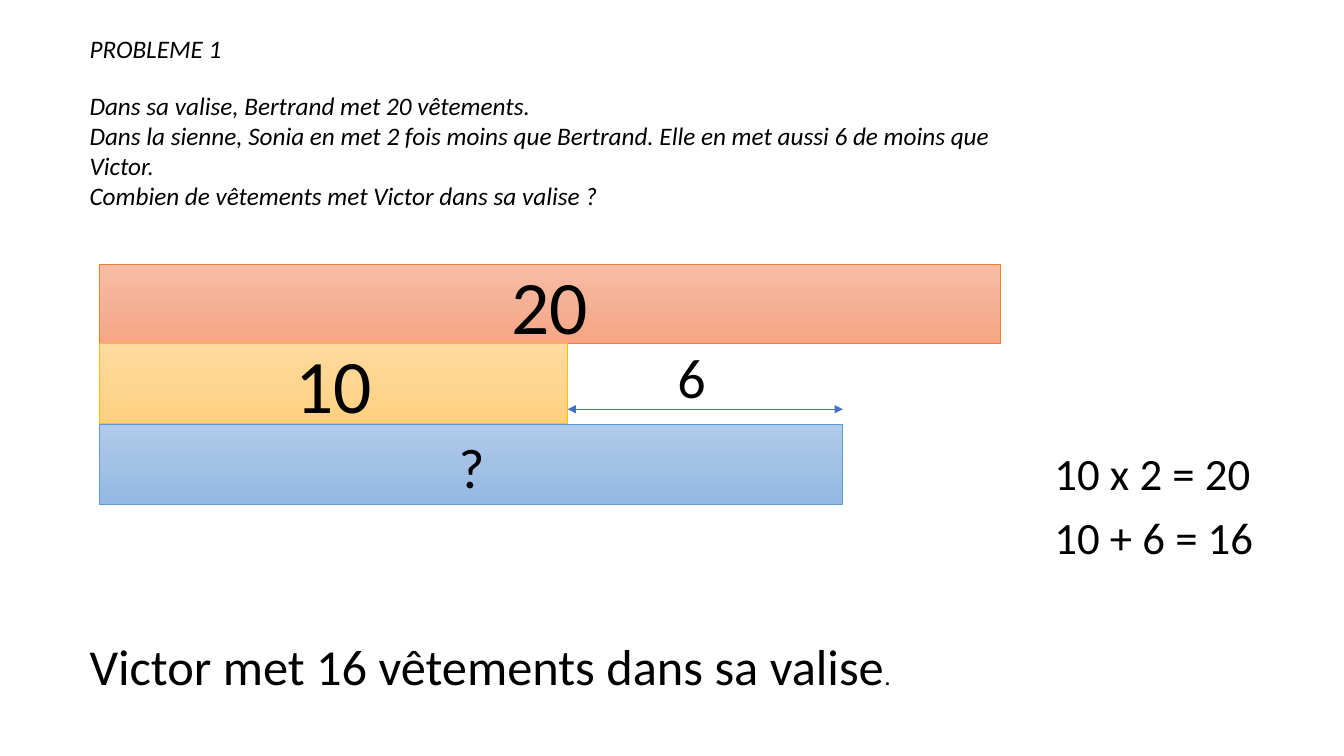
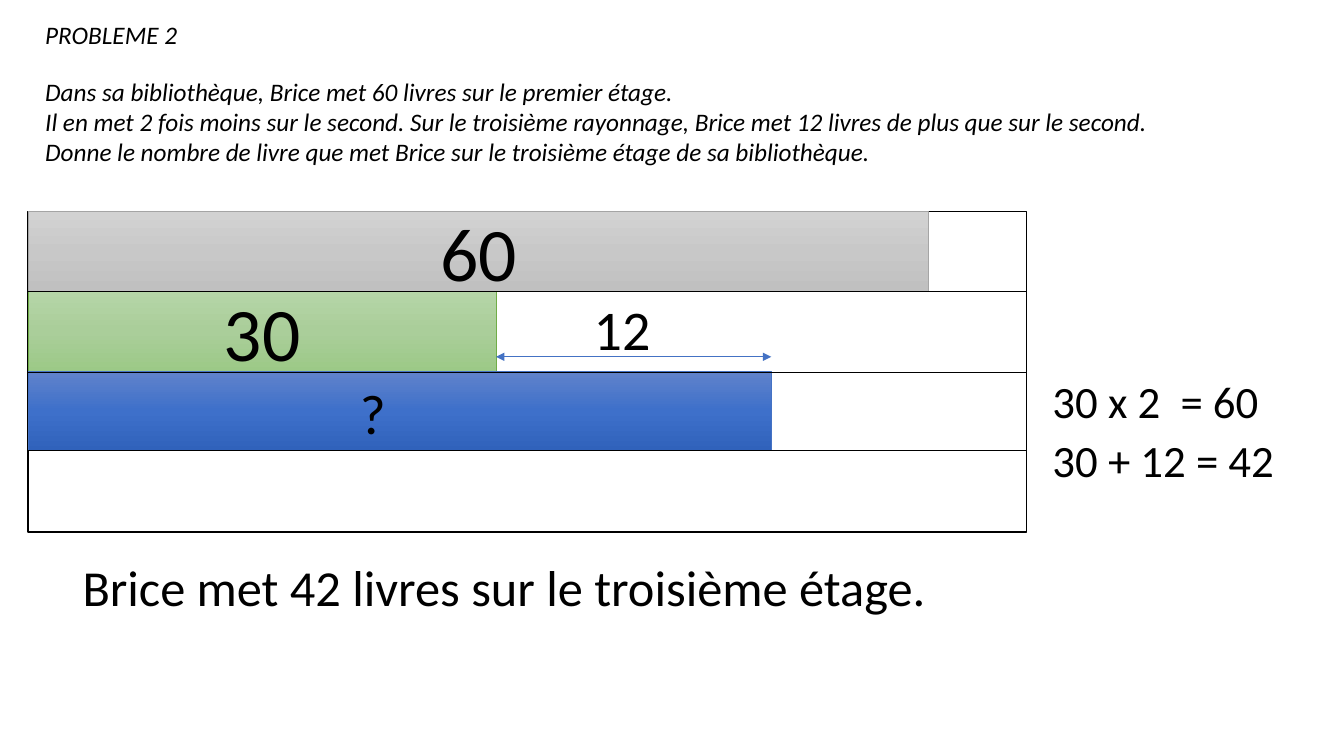
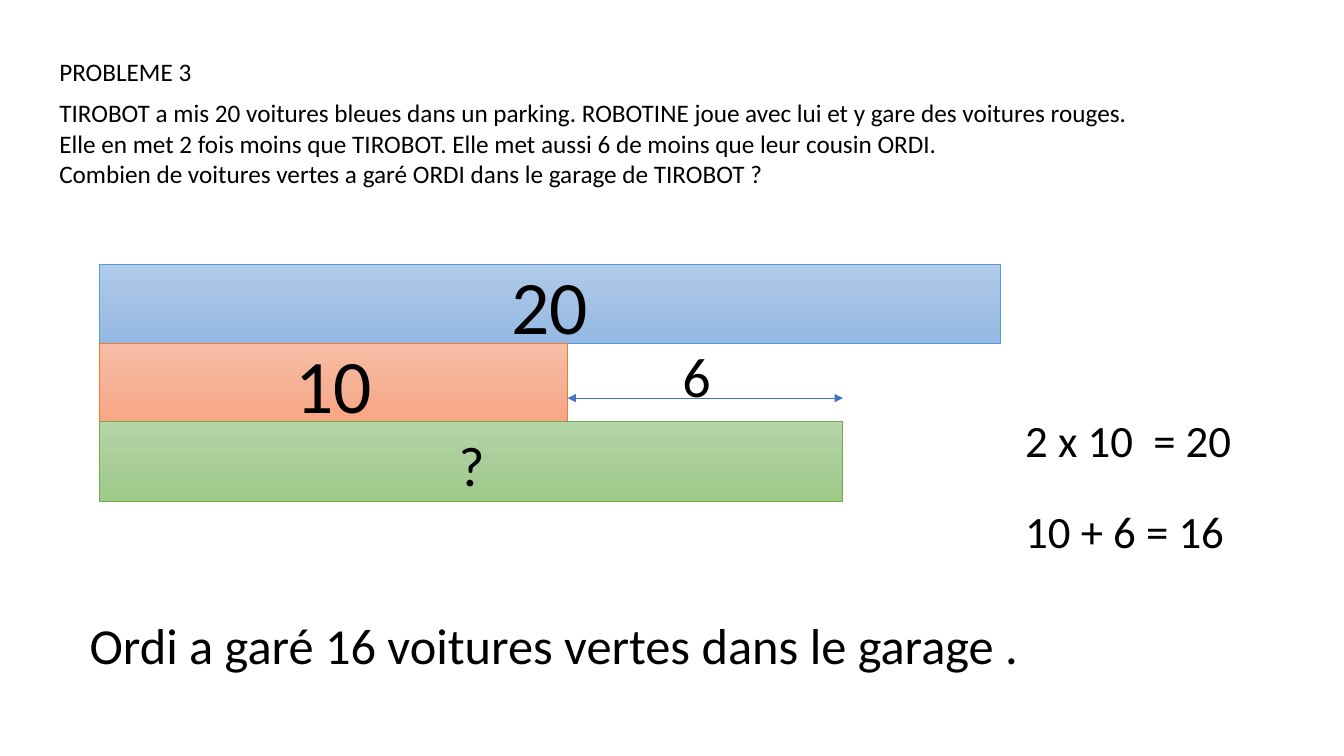
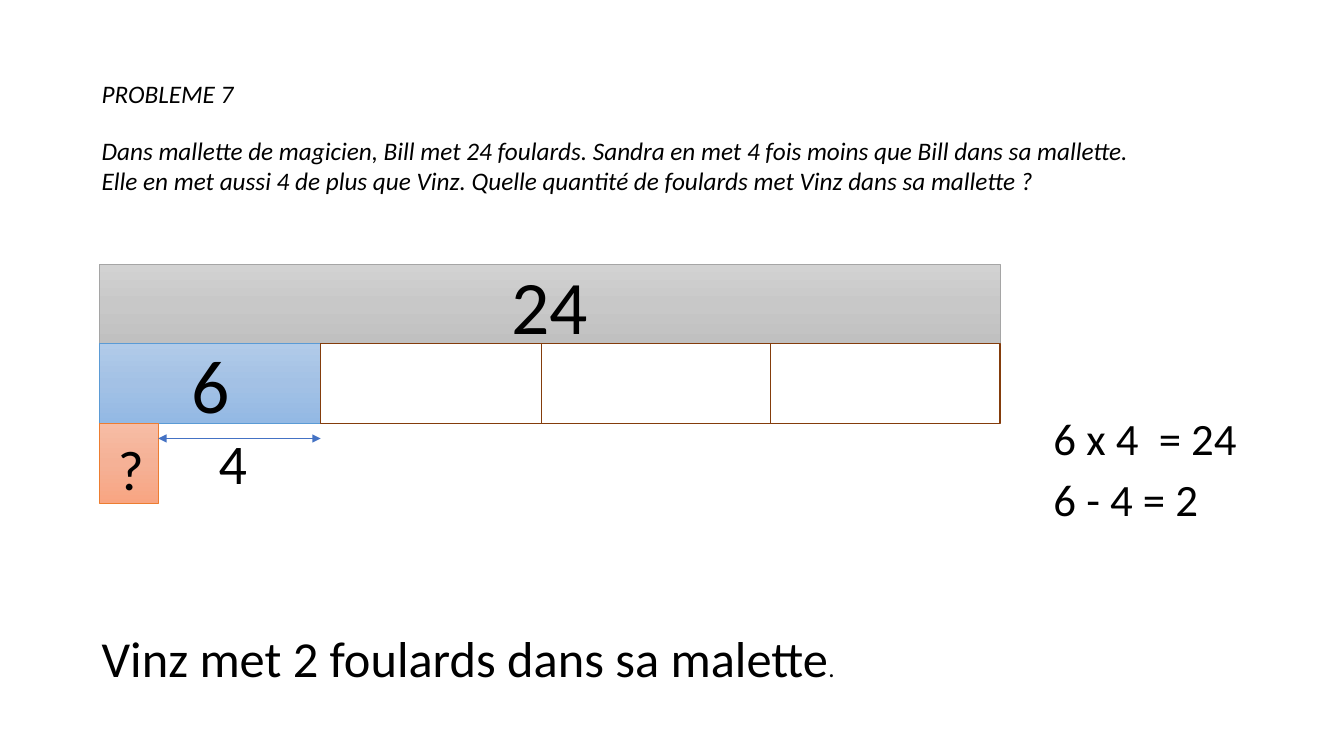
"""Build four slides of word problems solved with bar models."""
import copy
import dataclasses

import lxml.etree
import pptx
import pptx.dml.color
import pptx.enum.shapes
import pptx.enum.text
import pptx.oxml.ns
import pptx.shapes.autoshape
import pptx.shapes.connector
import pptx.slide
import pptx.text.text
import pptx.util

RGB = pptx.dml.color.RGBColor
Slide = pptx.slide.Slide
Auto = pptx.shapes.autoshape.Shape
Line = pptx.shapes.connector.Connector
Frame = pptx.text.text.TextFrame
Align = pptx.enum.text.PP_ALIGN
Spot = tuple[int, int]
Area = tuple[int, int, int, int]

SCALE = 9144
FONT = "Calibri"
BLACK = RGB(0x00, 0x00, 0x00)
WHITE = RGB(0xFF, 0xFF, 0xFF)
BROWN = RGB(0x84, 0x3C, 0x0B)
INDIGO = RGB(0x44, 0x72, 0xC4)
ROW = 79
FULL, HALF, LONG = 893, 464, 737


@dataclasses.dataclass(frozen=True)
class Tone:
    edge: RGB
    stops: tuple[RGB, RGB, RGB]


ORANGE = Tone(RGB(0xED, 0x7D, 0x31), (RGB(0xF7, 0xBD, 0xA5), RGB(0xF5, 0xB1, 0x96), RGB(0xF8, 0xA5, 0x82)))
GOLD = Tone(RGB(0xFF, 0xC0, 0x00), (RGB(0xFF, 0xDB, 0x9E), RGB(0xFF, 0xD5, 0x90), RGB(0xFF, 0xD0, 0x7C)))
BLUE = Tone(RGB(0x5B, 0x9B, 0xD5), (RGB(0xB1, 0xCB, 0xE9), RGB(0xA3, 0xC1, 0xE5), RGB(0x93, 0xB9, 0xE4)))
GREY = Tone(RGB(0xA5, 0xA5, 0xA5), (RGB(0xD2, 0xD2, 0xD2), RGB(0xC8, 0xC8, 0xC8), RGB(0xC0, 0xC0, 0xC0)))
GREEN = Tone(RGB(0x70, 0xAD, 0x47), (RGB(0xB5, 0xD5, 0xA7), RGB(0xAA, 0xCE, 0x9A), RGB(0x9C, 0xC9, 0x87)))
NAVY = Tone(INDIGO, (RGB(0x61, 0x83, 0xCB), RGB(0x3E, 0x70, 0xCA), RGB(0x30, 0x62, 0xBB)))


@dataclasses.dataclass(frozen=True)
class Bar:
    width: int
    tone: Tone
    text: str = ""


@dataclasses.dataclass(frozen=True)
class Task:
    title: str
    story: str
    area: Area
    sums: tuple[tuple[str, Spot], ...]
    answer: str
    foot: Spot
    bars: tuple[Bar, Bar, Bar]
    gap: str
    label: Spot
    level: int
    mark: Spot
    start: Spot = (99, 262)
    shift: int = 0
    dot: str = ""
    slant: bool = True
    before: int = 5
    after: int = 14
    spare: tuple[int, ...] = ()
    grid: bool = False


TASKS = (
    Task(
        "PROBLEME 1",
        "Dans sa valise, Bertrand met 20 vêtements.\n"
        "Dans la sienne, Sonia en met 2 fois moins que Bertrand. Elle en met aussi 6 de moins que Victor.\n"
        "Combien de vêtements met Victor dans sa valise ?",
        (79, 28, 913, 188),
        (("10 x 2 = 20", (1036, 437)), ("10 + 6 = 16", (1036, 501))),
        "Victor met 16 vêtements dans sa valise", (79, 625),
        (Bar(FULL, ORANGE, "20"), Bar(HALF, GOLD, "10"), Bar(LONG, BLUE)),
        "6", (662, 335), 406, (445, 424), shift=1, dot=".",
    ),
    Task(
        "PROBLEME 2",
        "Dans sa bibliothèque, Brice met 60 livres sur le premier étage.\n"
        "Il en met 2 fois moins sur le second. Sur le troisième rayonnage, "
        "Brice met 12 livres de plus que sur le second.\n"
        "Donne le nombre de livre que met Brice sur le troisième étage de sa bibliothèque.",
        (35, 14, 1185, 158),
        (("30 x 2  = 60", (1034, 366)), ("30 + 12 = 42", (1034, 424))),
        "Brice met 42 livres sur le troisième étage.", (72, 547),
        (Bar(FULL, GREY, "60"), Bar(HALF, GREEN, "30"), Bar(LONG, NAVY)),
        "12", (579, 287), 354, (347, 371), start=(28, 210), grid=True,
    ),
    Task(
        "PROBLEME 3",
        "TIROBOT a mis 20 voitures bleues dans un parking. "
        "ROBOTINE joue avec lui et y gare des voitures rouges.\n"
        "Elle en met 2 fois moins que TIROBOT. Elle met aussi 6 de moins que leur cousin ORDI.\n"
        "Combien de voitures vertes a garé ORDI dans le garage de TIROBOT ?",
        (49, 51, 1174, 142),
        (("2 x 10  = 20", (1007, 405)), ("10 + 6 = 16", (1007, 495))),
        "Ordi a garé 16 voitures vertes dans le garage .", (79, 604),
        (Bar(FULL, BLUE, "20"), Bar(HALF, ORANGE, "10"), Bar(LONG, GREEN)),
        "6", (667, 334), 395, (445, 422), shift=-2, slant=False, before=0, after=8,
    ),
    Task(
        "PROBLEME 7",
        "Dans mallette de magicien, Bill met 24 foulards. "
        "Sandra en met 4 fois moins que Bill dans sa mallette. "
        "Elle en met aussi 4 de plus que Vinz. "
        "Quelle quantité de foulards met Vinz dans sa mallette ?",
        (91, 73, 1065, 128),
        (("6 x 4  = 24", (1035, 403)), ("6 - 4 = 2", (1035, 463))),
        "Vinz met 2 foulards dans sa malette", (91, 617),
        (Bar(FULL, GREY, "24"), Bar(219, BLUE, "6"), Bar(58, ORANGE)),
        "4", (207, 420), 435, (107, 426), dot=".", spare=(219, 227, 228),
    ),
)


def px(*sizes: int) -> list[pptx.util.Emu]:
    return [pptx.util.Emu(size * SCALE) for size in sizes]


def write(frame: Frame, *paras: str, size: int, slant: bool = False, align: Align = Align.LEFT,
          before: int = 0, after: int = 0, dot: str = "") -> None:
    frame.word_wrap = True
    for rank, text in enumerate(paras):
        para = frame.paragraphs[0] if rank == 0 else frame.add_paragraph()
        para.text = text
        para.alignment = align
        para.space_before = pptx.util.Pt(before)
        para.space_after = pptx.util.Pt(after)
        for run in para.runs:
            run.font.size = pptx.util.Pt(size)
        if dot:
            tail = para.add_run()
            tail.text = dot
            tail.font.size = pptx.util.Pt(18)
        for run in para.runs:
            run.font.name = FONT
            run.font.italic = slant
            run.font.color.rgb = BLACK


def note(slide: Slide, area: Area, *paras: str, **look) -> None:
    frame = slide.shapes.add_textbox(*px(*area)).text_frame
    write(frame, *paras, **look)
    frame.auto_size = pptx.enum.text.MSO_AUTO_SIZE.SHAPE_TO_FIT_TEXT


def rect(slide: Slide, area: Area, edge: RGB, weight: float) -> Auto:
    box = slide.shapes.add_shape(pptx.enum.shapes.MSO_SHAPE.RECTANGLE, *px(*area))
    box.shadow.inherit = False
    box.line.color.rgb = edge
    box.line.width = pptx.util.Pt(weight)
    return box


def shade(box: Auto, tone: Tone) -> None:
    box.fill.gradient()
    box.fill.gradient_angle = 270
    first = box._element.xpath(".//a:gs")[0]
    first.addnext(copy.deepcopy(first))
    for rank, (stop, tint) in enumerate(zip(box.fill.gradient_stops, tone.stops)):
        stop.position = rank / 2
        stop.color.rgb = tint


def rule(slide: Slide, left: int, right: int, top: int, tint: RGB, heads: bool = False) -> Line:
    line = slide.shapes.add_connector(pptx.enum.shapes.MSO_CONNECTOR.STRAIGHT, *px(left, top, right, top))
    line.line.color.rgb = tint
    line.line.width = pptx.util.Pt(0.5)
    if heads:
        for tag in ("a:headEnd", "a:tailEnd"):
            lxml.etree.SubElement(line.line._get_or_add_ln(), pptx.oxml.ns.qn(tag), type="triangle")
    lxml.etree.SubElement(line._element.spPr, pptx.oxml.ns.qn("a:effectLst"))
    return line


def model(slide: Slide, task: Task) -> None:
    left, top = task.start
    for rank, bar in enumerate(task.bars):
        drop = task.shift if rank == 2 else 0
        box = rect(slide, (left, top + rank * ROW + drop, bar.width, ROW), bar.tone.edge, 0.5)
        shade(box, bar.tone)
        if bar.text:
            write(box.text_frame, bar.text, size=54, align=Align.CENTER)
    ends = sorted(left + bar.width for bar in task.bars[1:])
    rule(slide, *ends, task.level, INDIGO, heads=True)
    for text, spot in ((task.gap, task.label), ("?", task.mark)):
        note(slide, (*spot, 100, 77), text, size=40)
    edge = left + task.bars[1].width
    for width in task.spare:
        cell = rect(slide, (edge, top + ROW, width, ROW), BROWN, 1)
        cell.fill.solid()
        cell.fill.fore_color.rgb = WHITE
        edge += width


def draw(slide: Slide, task: Task) -> None:
    note(slide, task.area, task.title, task.story, size=18, slant=task.slant,
         before=task.before, after=task.after)
    for text, spot in task.sums:
        note(slide, (*spot, 269, 64), text, size=32)
    note(slide, (*task.foot, 1031, 71), task.answer, size=36, dot=task.dot)
    if not task.grid:
        model(slide, task)
        return
    left, top = task.start
    width = 990
    table = rect(slide, (left, top, width, 4 * ROW + 2), BLACK, 1)
    table.fill.background()
    model(slide, task)
    for rank in (1, 2, 3):
        line = rule(slide, left, left + width, top + rank * ROW, BLACK)
        if rank == 2:
            line.begin_connect(table, 1)
            line.end_connect(table, 3)


def main() -> None:
    deck = pptx.Presentation()
    deck.slide_width, deck.slide_height = px(1333, 750)
    for task in TASKS:
        draw(deck.slides.add_slide(deck.slide_layouts[6]), task)
    deck.save("out.pptx")


if __name__ == "__main__":
    main()
